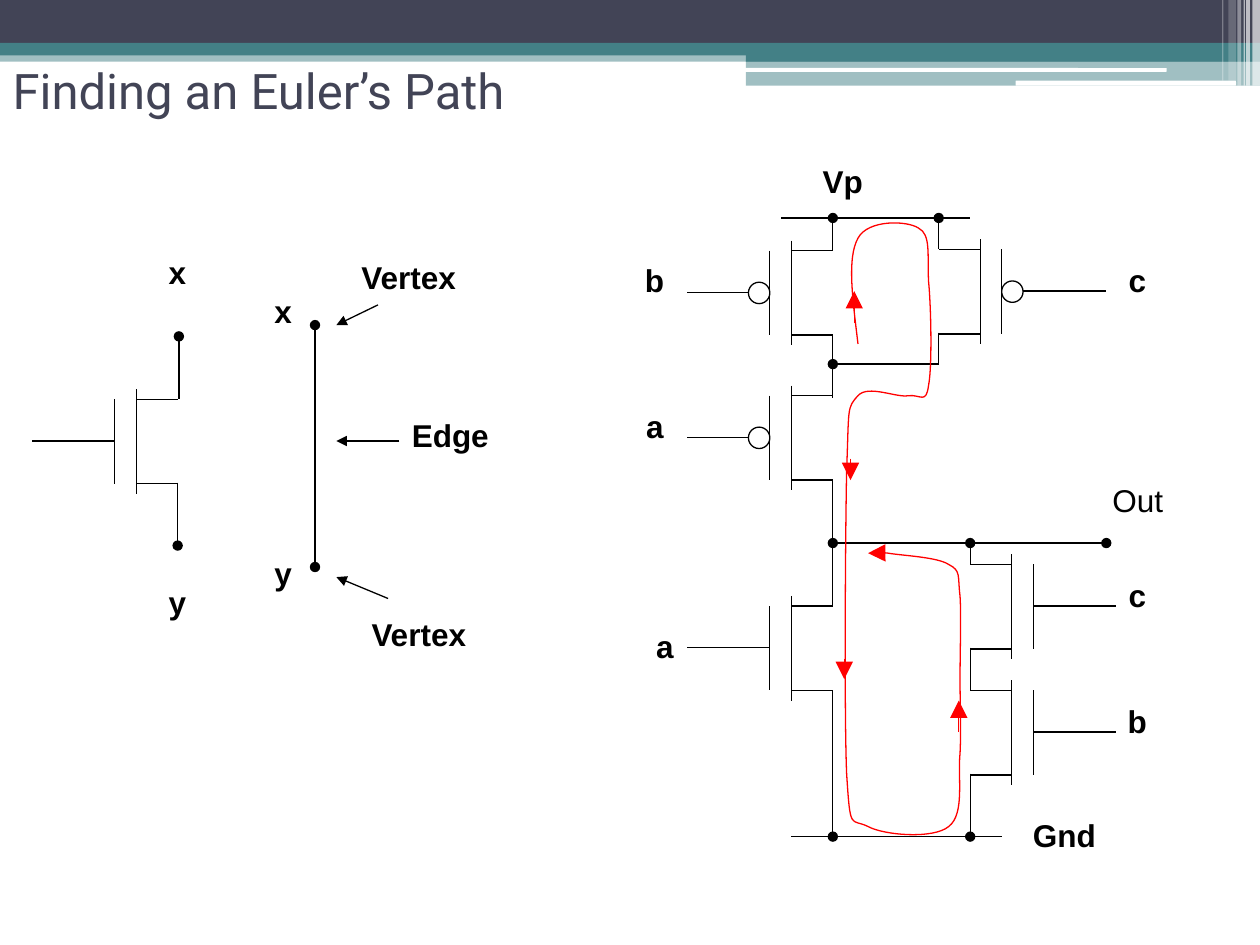
from lxml import etree
from pptx import Presentation
from pptx import util as u
from pptx.dml.color import RGBColor
from pptx.enum import shapes, text
from pptx.oxml.ns import qn


class Theme:
    navy = RGBColor(0x42, 0x44, 0x56)
    teal = RGBColor(0x43, 0x80, 0x86)
    white = RGBColor(0xFF, 0xFF, 0xFF)
    ink = RGBColor(0x00, 0x00, 0x00)
    route = RGBColor(0xFF, 0x00, 0x00)
    title_font, title_size = "Roboto", u.Pt(28)
    label_font, label_size = "Arial", u.Pt(18)
    thin, normal = u.Pt(0.5), u.Pt(0.75)


PX = 9144


def stroke(item, color=Theme.ink, width=Theme.normal, head=None, tail=None):
    item.line.color.rgb = color
    item.line.width = width
    properties = item._element.spPr
    outline = properties.find(qn("a:ln"))
    size = "lg" if color == Theme.route else "med"
    for tag, kind in (("a:headEnd", head), ("a:tailEnd", tail)):
        if kind:
            etree.SubElement(outline, qn(tag), type=kind, w=size, len=size)
    etree.SubElement(properties, qn("a:effectLst"))


def wire(x1, y1, x2, y2, **style):
    line = page.shapes.add_connector(
        shapes.MSO_CONNECTOR.STRAIGHT, x1 * PX, y1 * PX, x2 * PX, y2 * PX)
    stroke(line, **style)


deck = Presentation()
deck.slide_width, deck.slide_height = 1000 * PX, 750 * PX
page = deck.slides.add_slide(deck.slide_layouts[5])

RECT = shapes.MSO_SHAPE.RECTANGLE
ROUND = shapes.MSO_SHAPE.ROUNDED_RECTANGLE
bands = [
    (RECT, 0, 40, 1000, 9, Theme.teal, 50),
    (RECT, 0, 0, 1000, 34, Theme.navy, 100),
    (RECT, 0, 34, 1000, 10, Theme.teal, 100),
    (RECT, 592, 39, 408, 10, Theme.teal, 100),
    (RECT, 592, 48, 408, 20, Theme.teal, 50),
    (ROUND, 591, 54, 335, 3, Theme.white, 100),
    (ROUND, 806, 64, 175, 4, Theme.white, 100),
    (RECT, 994, 0, 6, 68, Theme.white, 65),
    (RECT, 989, 0, 3, 68, Theme.white, 65),
    (RECT, 987, 0, 1, 68, Theme.white, 60),
    (RECT, 982, 0, 3, 68, Theme.white, 40),
    (RECT, 975, 0, 6, 64, Theme.white, 20),
    (RECT, 970, 0, 1, 64, Theme.white, 30),
]
for preset, left, top, width, height, color, opacity in bands:
    band = page.shapes.add_shape(preset, left * PX, top * PX, width * PX, height * PX)
    band.shadow.inherit = False
    band.line.fill.background()
    band.fill.solid()
    band.fill.fore_color.rgb = color
    if opacity < 100:
        tint = band._element.spPr.find(qn("a:solidFill"))[0]
        etree.SubElement(tint, qn("a:alpha"), val=str(opacity * 1000))

title = page.shapes.title
title.left, title.top, title.width, title.height = 0, 44 * PX, 900 * PX, 55 * PX
frame = title.text_frame
frame.text = "Finding an Euler’s Path"
frame.auto_size = text.MSO_AUTO_SIZE.NONE
frame.vertical_anchor = text.MSO_ANCHOR.MIDDLE
para = frame.paragraphs[0]
para.alignment = text.PP_ALIGN.LEFT
para.font.name, para.font.size = Theme.title_font, Theme.title_size
para.font.color.rgb = Theme.navy

BUBBLE, GATE, STUB = 17, 67, 33
transistors = [
    (628, 199, 1, True, 545),
    (628, 314, 1, True, 545),
    (628, 481, 1, False, 545),
    (778, 198, -1, True, 878),
    (803, 448, -1, False, 886),
    (803, 548, -1, False, 886),
    (108, 317, 1, False, 25),
]
for channel, top, side, inverted, lead_end in transistors:
    plate, middle = channel - 17 * side, top + 33
    wire(channel, top - 8, channel, top + GATE + 8, width=Theme.thin)
    wire(plate, top, plate, top + GATE, width=Theme.thin)
    for y in (top, top + GATE):
        wire(channel, y, channel + STUB * side, y)
    lead_start = plate
    if inverted:
        lead_start = plate - BUBBLE * side
        bubble = page.shapes.add_shape(
            shapes.MSO_SHAPE.OVAL, min(plate, lead_start) * PX, (middle - 8) * PX,
            BUBBLE * PX, BUBBLE * PX)
        bubble.fill.background()
        stroke(bubble)
    wire(lead_start, middle, lead_end, middle)

wires = [
    (620, 173, 770, 173, None, None),
    (661, 173, 661, 199, "oval", None),
    (745, 173, 745, 198, "oval", None),
    (661, 266, 661, 316, None, None),
    (745, 264, 745, 289, None, None),
    (745, 289, 661, 289, None, "oval"),
    (661, 381, 661, 481, None, None),
    (661, 431, 878, 431, "oval", "oval"),
    (770, 431, 770, 448, "oval", None),
    (770, 514, 770, 548, None, None),
    (661, 548, 661, 664, None, "oval"),
    (770, 614, 770, 664, None, "oval"),
    (628, 664, 795, 664, None, None),
    (142, 267, 142, 317, "oval", None),
    (141, 383, 141, 433, None, "oval"),
    (250, 258, 250, 450, "oval", "oval"),
    (317, 350, 267, 350, None, "triangle"),
    (300, 242, 267, 258, None, "triangle"),
    (308, 475, 267, 458, None, "triangle"),
]
for *ends, head, tail in wires:
    wire(*ends, head=head, tail=tail)

labels = [
    ("Vp", 643, 124, 52), ("b", 502, 202, 35), ("a", 503, 318, 34),
    ("a", 511, 493, 34), ("c", 886, 202, 34), ("Out", 873, 377, 60),
    ("c", 886, 452, 34), ("b", 885, 552, 35), ("Gnd", 810, 643, 70),
    ("x", 124, 196, 34), ("y", 124, 458, 34), ("x", 208, 227, 34),
    ("y", 208, 435, 34), ("Vertex", 277, 200, 95), ("Edge", 317, 325, 81),
    ("Vertex", 285, 483, 95),
]
for wording, left, top, width in labels:
    box = page.shapes.add_textbox(left * PX, top * PX, width * PX, 40 * PX)
    box.text_frame.word_wrap = False
    box.text_frame.auto_size = text.MSO_AUTO_SIZE.SHAPE_TO_FIT_TEXT
    para = box.text_frame.paragraphs[0]
    para.text = wording
    para.font.name, para.font.size = Theme.label_font, Theme.label_size
    para.font.bold = wording != "Out"
    para.font.color.rgb = Theme.ink

curve_points = [
    (677, 239), (672, 205), (681, 189), (689, 174), (720, 175), (729, 181),
    (739, 186), (736, 202), (737, 223), (739, 243), (740, 291), (737, 306),
    (735, 321), (731, 313), (721, 314), (712, 316), (689, 305), (681, 314),
    (672, 324), (674, 323), (672, 373), (671, 423), (670, 567), (672, 614),
    (675, 661), (675, 649), (689, 656), (702, 663), (741, 666), (753, 656),
    (766, 646), (760, 617), (762, 598), (763, 578), (762, 560), (762, 539),
    (762, 518), (763, 488), (762, 473), (760, 457), (763, 453), (753, 448),
    (744, 442), (716, 441), (705, 439), (694, 438), (691, 439), (689, 439),
]
builder = page.shapes.build_freeform(681, 273, scale=PX)
builder.add_line_segments(curve_points, close=False)
euler_route = builder.convert_to_shape()
euler_route.fill.background()
stroke(euler_route, color=Theme.route, tail="triangle")
outline = euler_route._element.find(".//" + qn("a:path"))
segments = outline.findall(qn("a:lnTo"))
for first in range(0, len(segments), 3):
    bezier = etree.SubElement(outline, qn("a:cubicBezTo"))
    for segment in segments[first:first + 3]:
        bezier.append(segment[0])
        outline.remove(segment)

for ends in [(678, 256, 678, 231), (675, 364, 675, 381),
             (670, 523, 670, 539), (761, 581, 761, 556)]:
    wire(*ends, color=Theme.route, tail="triangle")

deck.save("out.pptx")
